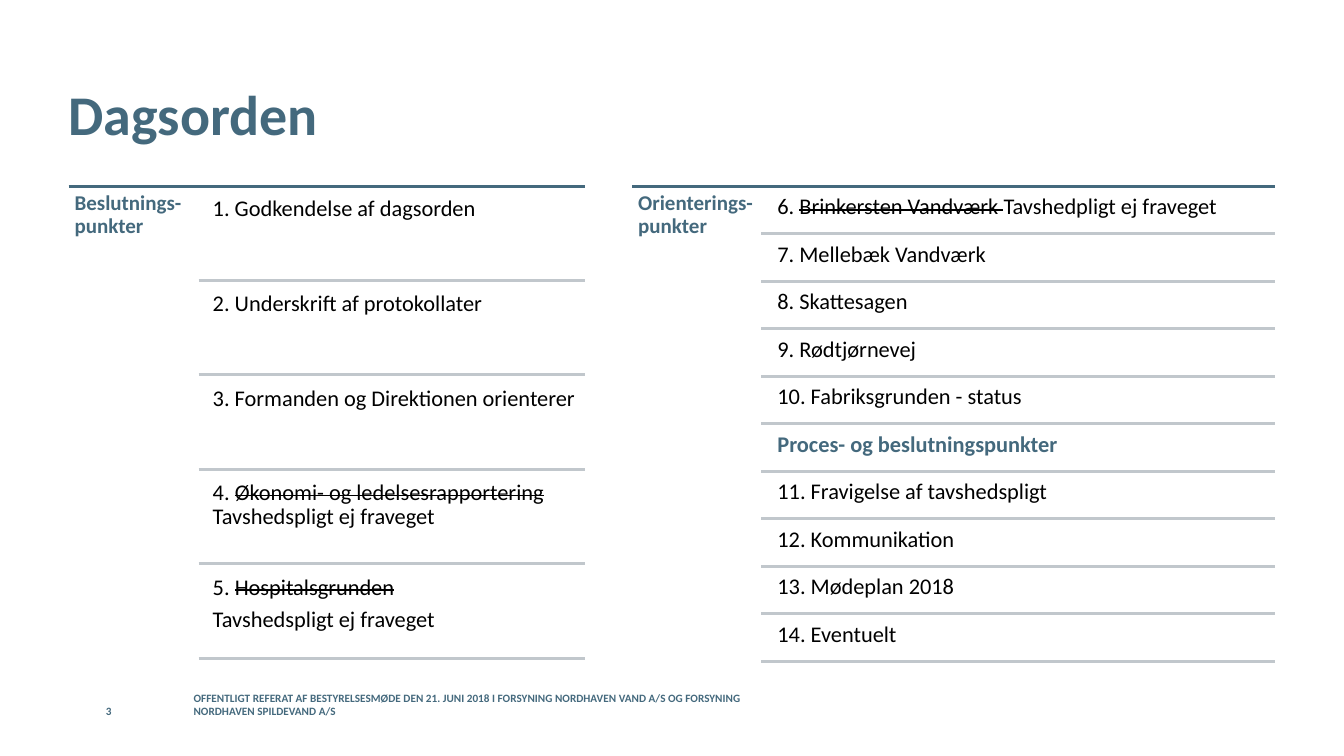
"""Build the agenda slide with decision points and orientation points."""
from dataclasses import dataclass

from lxml import etree
from pptx import Presentation
from pptx.dml.color import RGBColor
from pptx.enum.shapes import MSO_CONNECTOR
from pptx.enum.text import MSO_ANCHOR
from pptx.oxml.ns import qn
from pptx.util import Inches, Pt

TOP, MIDDLE, BOTTOM = MSO_ANCHOR.TOP, MSO_ANCHOR.MIDDLE, MSO_ANCHOR.BOTTOM
STRAIGHT = MSO_CONNECTOR.STRAIGHT


@dataclass(frozen=True)
class Theme:
    font: str = "Calibri"
    accent: RGBColor = RGBColor(0x44, 0x69, 0x7D)
    body: RGBColor = RGBColor(0x00, 0x00, 0x00)
    divider: RGBColor = RGBColor(0xC1, 0xC7, 0xCC)
    title_size: int = 40
    heading_size: int = 15
    item_size: int = 16
    footer_size: int = 8


theme = Theme()
agenda = Presentation()
agenda.slide_width, agenda.slide_height = Inches(13.33), Inches(7.5)
slide = agenda.slides.add_slide(agenda.slide_layouts[6])


def add_text(text, left, top, width, height, size, color=theme.accent, bold=True,
             inset=0, anchor=TOP, line_spacing=1.0, space_after=0):
    """Add a text box; text between tildes is struck through."""
    box = slide.shapes.add_textbox(Inches(left), Inches(top), Inches(width), Inches(height))
    frame = box.text_frame
    frame.word_wrap = True
    frame.vertical_anchor = anchor
    frame.margin_left = frame.margin_right = Inches(inset)
    frame.margin_top = frame.margin_bottom = Inches(inset)
    for index, line in enumerate(text.split("\n")):
        paragraph = frame.add_paragraph() if index else frame.paragraphs[0]
        paragraph.line_spacing = line_spacing
        paragraph.space_after = Pt(space_after)
        for part, words in enumerate(line.split("~")):
            if not words:
                continue
            run = paragraph.add_run()
            run.text = words
            run.font.name = theme.font
            run.font.size = Pt(size)
            run.font.bold = bold
            run.font.color.rgb = color
            if part % 2:
                run.font._element.set("strike", "sngStrike")


def add_rule(left, right, y, color):
    """Add a horizontal rule without a shadow."""
    rule = slide.shapes.add_connector(STRAIGHT, Inches(left), Inches(y), Inches(right), Inches(y))
    rule.line.color.rgb = color
    rule.line.width = Pt(2)
    etree.SubElement(rule._element.spPr, qn("a:effectLst"))


process_heading = "Proces- og beslutningspunkter"
sections = [
    dict(heading="Beslutnings-punkter", left=0.68, right=5.8, rule_left=1.97,
         item_left=2.04, item_top=1.89, item_height=0.89, pitch=4.69 / 5,
         items=["1. Godkendelse af dagsorden",
                "2. Underskrift af protokollater",
                "3. Formanden og Direktionen orienterer",
                "4. ~Økonomi- og ledelsesrapportering~ Tavshedspligt ej fraveget",
                "5. ~Hospitalsgrunden~\nTavshedspligt ej fraveget"]),
    dict(heading="Orienterings-punkter", left=6.27, right=12.65, rule_left=7.55,
         item_left=7.64, item_top=1.87, item_height=0.45, pitch=4.71 / 10,
         items=["6. ~Brinkersten Vandværk ~Tavshedpligt ej fraveget",
                "7. Mellebæk Vandværk",
                "8. Skattesagen",
                "9. Rødtjørnevej",
                "10. Fabriksgrunden - status",
                process_heading,
                "11. Fravigelse af tavshedspligt",
                "12. Kommunikation",
                "13. Mødeplan 2018",
                "14. Eventuelt"]),
]

add_text("Dagsorden", 0.68, 0.4, 11.5, 1.45, theme.title_size, anchor=MIDDLE)

section_top = 1.85
for section in sections:
    left, right, rule_left = section["left"], section["right"], section["rule_left"]
    add_rule(left, right, section_top, theme.accent)
    add_text(section["heading"], left, section_top, rule_left - left, 4.74,
             theme.heading_size, inset=0.06, line_spacing=0.9, space_after=5.25)
    for row, item in enumerate(section["items"]):
        item_top = section["item_top"] + row * section["pitch"]
        is_heading = item == process_heading
        add_text(item, section["item_left"], item_top, right - section["item_left"],
                 section["item_height"], theme.item_size,
                 color=theme.accent if is_heading else theme.body, bold=is_heading,
                 inset=0.07, line_spacing=0.9, space_after=5.6)
        add_rule(rule_left, right, item_top + section["item_height"], theme.divider)

footer = ("OFFENTLIGT REFERAT AF BESTYRELSESMØDE DEN 21. JUNI 2018 I "
          "FORSYNING NORDHAVEN VAND A/S OG FORSYNING NORDHAVEN SPILDEVAND A/S")
for text, left, width in [(footer, 1.92, 5.67), ("3", 1.05, 0.68)]:
    add_text(text, left, 6.93, width, 0.19, theme.footer_size, anchor=BOTTOM)

agenda.save("out.pptx")
